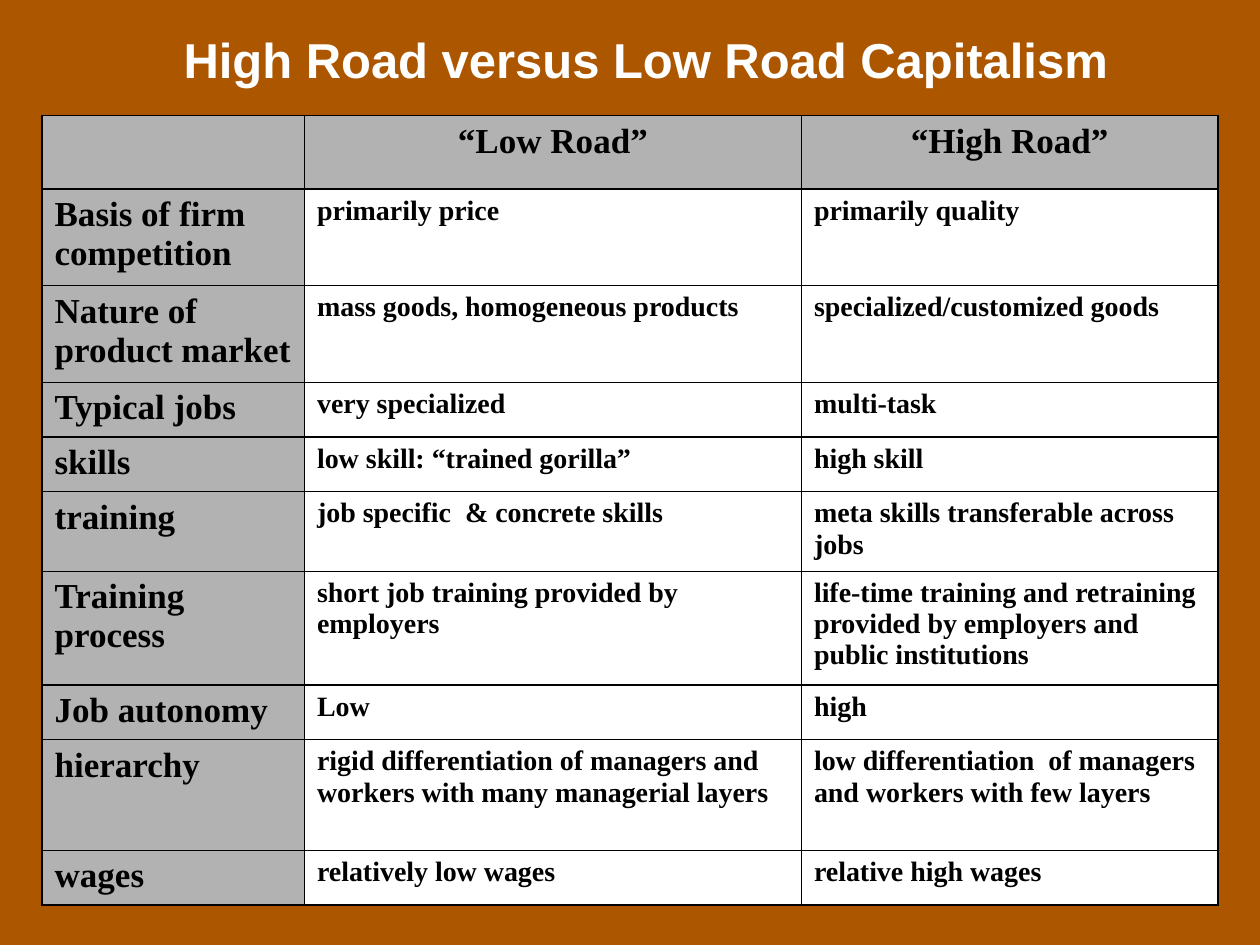
from dataclasses import dataclass

from lxml import etree
from pptx import Presentation
from pptx.dml.color import RGBColor
from pptx.enum import text
from pptx.oxml import ns
from pptx.util import Pt


@dataclass(frozen=True)
class Theme:
    """Colours, fonts and type sizes of the slide."""
    background: str = "AC5600"
    heading_fill: str = "B2B2B2"
    body_fill: str = "FFFFFF"
    ink: str = "000000"
    title_ink: str = "FFFFFF"
    title_font: str = "Arial"
    table_font: str = "Times New Roman"
    title_size: int = 28
    heading_size: int = 20
    body_size: int = 16
    border: int = 1


THEME = Theme()
COLUMN_WIDTHS = (150, 284, 238)
COMPARISON = [
    (42, "", "“Low Road”", "“High Road”"),
    (55.25, "Basis of firm competition", "primarily price", "primarily quality"),
    (55.25, "Nature of product market", "mass goods, homogeneous products",
     "specialized/customized goods"),
    (31.25, "Typical jobs", "very specialized", "multi-task"),
    (31.25, "skills", "low skill: “trained gorilla”", "high skill"),
    (45.5, "training", "job specific  & concrete skills",
     "meta skills transferable across jobs"),
    (65, "Training\nprocess", "short job training provided by employers",
     "life-time training and retraining provided by employers and public institutions"),
    (31.25, "Job autonomy", "Low", "high"),
    (63.25, "hierarchy",
     "rigid differentiation of managers and workers with many managerial layers",
     "low differentiation  of managers and workers with few layers"),
    (31.25, "wages", "relatively low wages", "relative high wages"),
]


def format_text(frame, font_name, size, color, alignment):
    """Apply one bold style to every paragraph of a text frame."""
    for paragraph in frame.paragraphs:
        paragraph.alignment = alignment
        for run in paragraph.runs:
            run.font.name = font_name
            run.font.size = Pt(size)
            run.font.bold = True
            run.font.color.rgb = RGBColor.from_string(color)


def add_borders(cell):
    """Draw a thin line on all four sides of a cell."""
    properties = cell._tc.get_or_add_tcPr()
    for position, side in enumerate(("lnL", "lnR", "lnT", "lnB")):
        line = etree.Element(ns.qn(f"a:{side}"), w=str(Pt(THEME.border)))
        fill = etree.SubElement(line, ns.qn("a:solidFill"))
        etree.SubElement(fill, ns.qn("a:srgbClr"), val=THEME.ink)
        properties.insert(position, line)


def place_title(slide, left, top, width, height):
    """Place and format the slide title in the given box."""
    title = slide.shapes.title
    title.left, title.top, title.width, title.height = map(Pt, (left, top, width, height))
    frame = title.text_frame
    frame.text = "High Road versus Low Road Capitalism"
    frame.word_wrap = True
    frame.auto_size = text.MSO_AUTO_SIZE.NONE
    frame.vertical_anchor = text.MSO_ANCHOR.MIDDLE
    format_text(frame, THEME.title_font, THEME.title_size, THEME.title_ink,
                text.PP_ALIGN.CENTER)


def fill_cell(cell, wording, is_header, is_label):
    """Write and style one cell of the comparison."""
    is_heading = is_header or is_label
    cell.text_frame.text = wording
    cell.fill.solid()
    cell.fill.fore_color.rgb = RGBColor.from_string(
        THEME.heading_fill if is_heading else THEME.body_fill)
    format_text(cell.text_frame, THEME.table_font,
                THEME.heading_size if is_heading else THEME.body_size, THEME.ink,
                text.PP_ALIGN.CENTER if is_header else text.PP_ALIGN.LEFT)
    add_borders(cell)


def place_comparison(slide, left, top):
    """Build the comparison table with its top left corner at the given point."""
    width, height = sum(COLUMN_WIDTHS), sum(row[0] for row in COMPARISON)
    comparison = slide.shapes.add_table(
        len(COMPARISON), len(COLUMN_WIDTHS), Pt(left), Pt(top), Pt(width), Pt(height)).table
    for column, column_width in zip(comparison.columns, COLUMN_WIDTHS):
        column.width = Pt(column_width)
    for row_index, (row_height, *wordings) in enumerate(COMPARISON):
        comparison.rows[row_index].height = Pt(row_height)
        for column_index, wording in enumerate(wordings):
            fill_cell(comparison.cell(row_index, column_index), wording,
                      row_index == 0, column_index == 0)


def main():
    """Build and save the slide."""
    deck = Presentation()
    deck.slide_width, deck.slide_height = Pt(720), Pt(540)
    slide = deck.slides.add_slide(deck.slide_layouts.get_by_name("Title Only"))
    slide.background.fill.solid()
    slide.background.fill.fore_color.rgb = RGBColor.from_string(THEME.background)
    place_comparison(slide, 24, 66)
    place_title(slide, 90, 13, 558, 41)
    deck.save("out.pptx")


if __name__ == "__main__":
    main()
